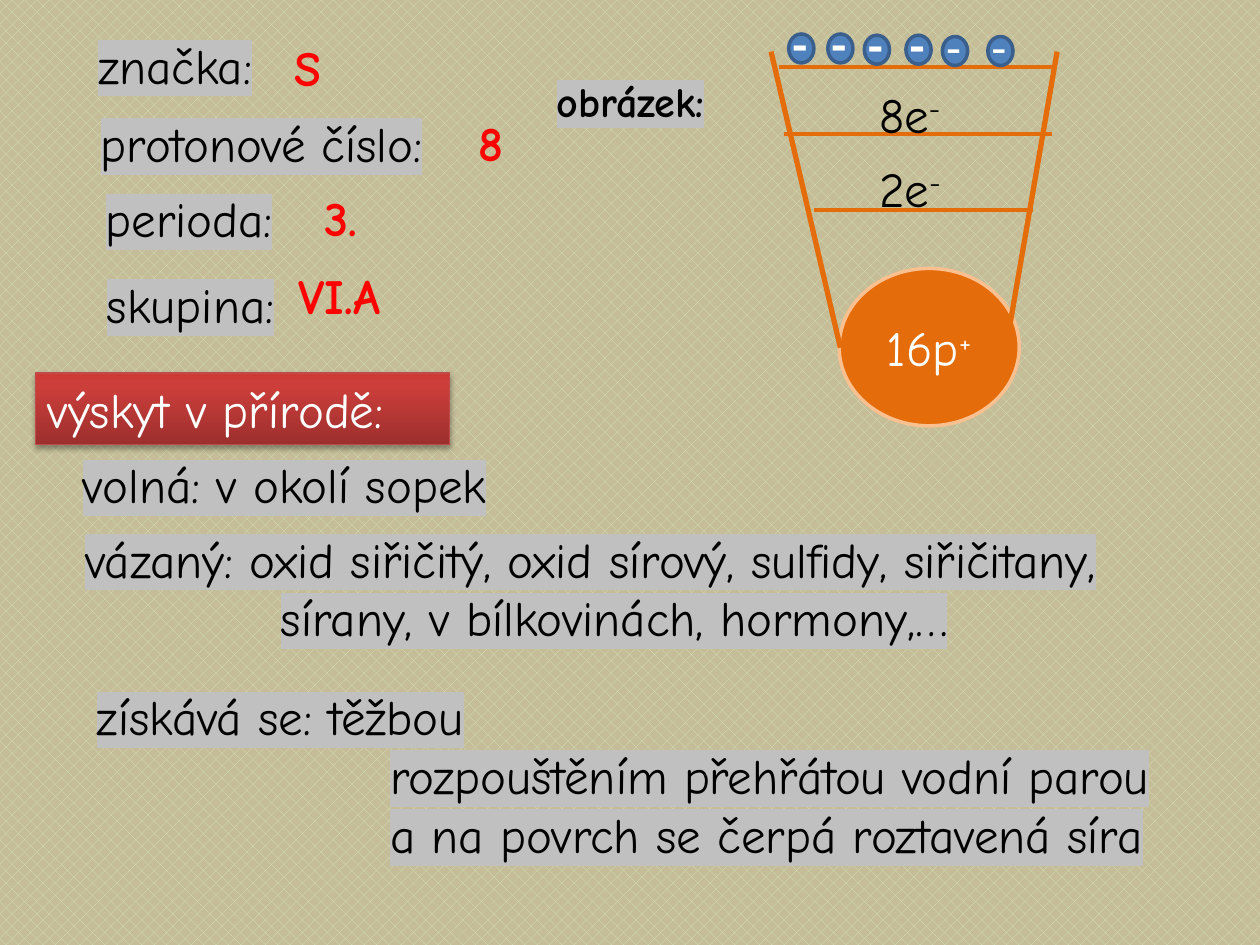
from lxml import etree
from copy import deepcopy
from pptx import Presentation
from pptx.dml.color import RGBColor
from pptx.enum.dml import MSO_PATTERN as Pattern
from pptx.enum.shapes import MSO_CONNECTOR as Link, MSO_SHAPE as Shape
from pptx.enum.text import MSO_ANCHOR as Anchor, MSO_AUTO_SIZE as Fit, PP_ALIGN as Align
from pptx.oxml.ns import qn
from pptx.util import Inches, Pt

FONT = "Comic Neue"
BLACK, WHITE, RED, GRAY = "000000", "FFFFFF", "FF0000", "C0C0C0"
ORANGE, PEACH, BLUE, NAVY = "E46C0A", "FAC090", "4F81BD", "3A5F8C"


def rgb(code):
    return RGBColor.from_string(code)


def node(parent, tag, **attrs):
    return etree.SubElement(parent, qn(tag), attrs)


def style(para, color, size=28, bold=False, face=FONT):
    font = para.font
    font.name, font.size, font.bold = face, Pt(size), bold
    font.color.rgb = rgb(color)


def mark(run):
    """Give a run a gray highlight."""
    light = node(run._r.get_or_add_rPr(), "a:highlight")
    node(light, "a:srgbClr", val=GRAY)


def raised(para, base, sign):
    para.add_run().text = base
    run = para.add_run()
    run.text = sign
    run._r.get_or_add_rPr().set("baseline", "30000")


def label(slide, left, top, width, height, lines, color=BLACK, lit=False,
          tab=None, power=None, **look):
    box = slide.shapes.add_textbox(*map(Inches, (left, top, width, height)))
    frame = box.text_frame
    frame.word_wrap, frame.auto_size = False, Fit.SHAPE_TO_FIT_TEXT
    for i, line in enumerate(lines):
        para = frame.add_paragraph() if i else frame.paragraphs[0]
        if power:
            raised(para, line, power)
        else:
            para.add_run().text = line
        style(para, color, **look)
        if lit:
            mark(para.runs[0])
        if tab:
            stops = etree.Element(qn("a:tabLst"))
            node(stops, "a:tab", pos=str(Inches(tab)), algn="l")
            para._p.pPr.insert(0, stops)


def ball(slide, left, top, width, height, fill, edge):
    oval = slide.shapes.add_shape(
        Shape.OVAL, *map(Inches, (left, top, width, height)))
    oval.shadow.inherit = False
    oval.fill.solid()
    oval.fill.fore_color.rgb = rgb(fill)
    oval.line.color.rgb = rgb(edge)
    oval.line.width = Pt(2)
    return oval


def line(slide, x1, y1, x2, y2, width):
    link = slide.shapes.add_connector(
        Link.STRAIGHT, *map(Inches, (x1, y1, x2, y2)))
    link.line.color.rgb = rgb(ORANGE)
    link.line.width = Pt(width)
    node(link._element.spPr, "a:effectLst")


def facts(slide, left, top):
    # Name and value of each property: (text, x, y, width)
    names = [("značka:", 0, 0, 1.59), ("protonové číslo:", 0.02, 0.62, 3.11),
             ("perioda:", 0.06, 1.22, 1.69), ("skupina:", 0.07, 1.9, 1.65)]
    values = [("S", 1.56, 0.02, 0.47), ("8", 3.02, 0.61, 0.44),
              ("3.", 1.8, 1.21, 0.61), ("VI.A", 1.59, 1.83, 1.14)]
    for text, x, y, width in names:
        label(slide, left + x, top + y, width, 0.57, [text], lit=True)
    for text, x, y, width in values:
        label(slide, left + x, top + y, width, 0.57, [text], RED, bold=True)


def atom(slide, left, top):
    # Nucleus
    core = ball(slide, left + 0.54, top + 1.86, 1.43, 1.25, ORANGE, PEACH)
    frame = core.text_frame
    frame.vertical_anchor = Anchor.MIDDLE
    para = frame.paragraphs[0]
    para.alignment = Align.CENTER
    raised(para, "16p", "+")
    style(para, WHITE)
    # Sides and shells
    line(slide, left + 0.55, top + 2.49, left, top + 0.14, 3)
    line(slide, left + 1.89, top + 2.34, left + 2.27, top + 0.14, 3)
    for x1, x2, y in [(0.34, 2.08, 1.4), (0.1, 2.23, 0.79), (0.06, 2.27, 0.26)]:
        line(slide, left + x1, top + y, left + x2, top + y, 2.25)
    for text, y in [("2e", 0.94), ("8e", 0.35)]:
        label(slide, left + 0.76, top + y, 0.77, 0.57, [text], power="-")
    # Outer electrons
    spots = [(0.14, 0, True), (0.45, 0, True), (0.74, 0.01, True),
             (1.07, 0.01, True), (1.36, 0.02, False), (1.72, 0.02, False)]
    for x, y, bold in spots:
        ball(slide, left + x, top + y, 0.2, 0.23, BLUE, NAVY)
        label(slide, left + x - 0.07, top + y - 0.21, 0.32, 0.57, ["-"],
              WHITE, bold=bold, face="Calibri")


def banner(slide, left, top, width, height, text):
    bar = slide.shapes.add_shape(
        Shape.RECTANGLE, *map(Inches, (left, top, width, height)))
    # Three-stop gradient, dark at the bottom
    bar.fill.gradient()
    bar.fill.gradient_angle = 90
    stops = bar.fill._fill._gradFill.gsLst
    stops.append(deepcopy(stops[-1]))
    tones = [(0, "9C2F2D"), (0.8, "CB3E3A"), (1, "CE3B37")]
    for stop, (place, tone) in zip(bar.fill.gradient_stops, tones):
        stop.position = place
        stop.color.rgb = rgb(tone)
    bar.line.color.rgb = rgb("BF4C48")
    bar.line.width = Pt(0.75)
    # Soft shadow below
    drop = node(node(bar._element.spPr, "a:effectLst"), "a:outerShdw",
                blurRad=str(Pt(3.1)), dist=str(Pt(1.8)), dir="5400000",
                rotWithShape="0")
    node(node(drop, "a:srgbClr", val=BLACK), "a:alpha", val="35000")
    frame = bar.text_frame
    frame.word_wrap, frame.auto_size = False, Fit.SHAPE_TO_FIT_TEXT
    frame.vertical_anchor = Anchor.TOP
    para = frame.paragraphs[0]
    para.alignment = Align.LEFT
    para.add_run().text = text
    style(para, WHITE)


def nature(slide, left, top):
    banner(slide, left, top, 3.29, 0.57, "výskyt v přírodě:")
    label(slide, left + 0.28, top + 0.6, 3.66, 0.57,
          ["volná: v okolí sopek"], lit=True)
    label(slide, left + 0.3, top + 1.19, 9.66, 1.04,
          ["vázaný: oxid siřičitý, oxid sírový, sulfidy, siřičitany,",
           "\tsírany, v bílkovinách, hormony,…"], lit=True, tab=1.55)
    label(slide, left + 0.39, top + 2.44, 8.86, 1.51,
          ["získává se: těžbou", "\trozpouštěním přehřátou vodní parou",
           "\ta na povrch se čerpá roztavená síra"], lit=True, tab=2.33)


def main():
    deck = Presentation()
    deck.slide_width, deck.slide_height = Inches(10), Inches(7.5)
    slide = deck.slides.add_slide(deck.slide_layouts[6])
    # Patterned background
    fill = slide.background.fill
    fill.patterned()
    fill.pattern = Pattern.PERCENT_30
    fill.fore_color.rgb, fill.back_color.rgb = rgb("D7E4BD"), rgb("C4BD97")

    facts(slide, 0.68, 0.23)
    label(slide, 4.32, 0.55, 1.62, 0.5, ["obrázek:"], lit=True, size=24, bold=True)
    atom(slide, 6.12, 0.27)
    nature(slide, 0.28, 2.96)
    deck.save("out.pptx")


if __name__ == "__main__":
    main()
